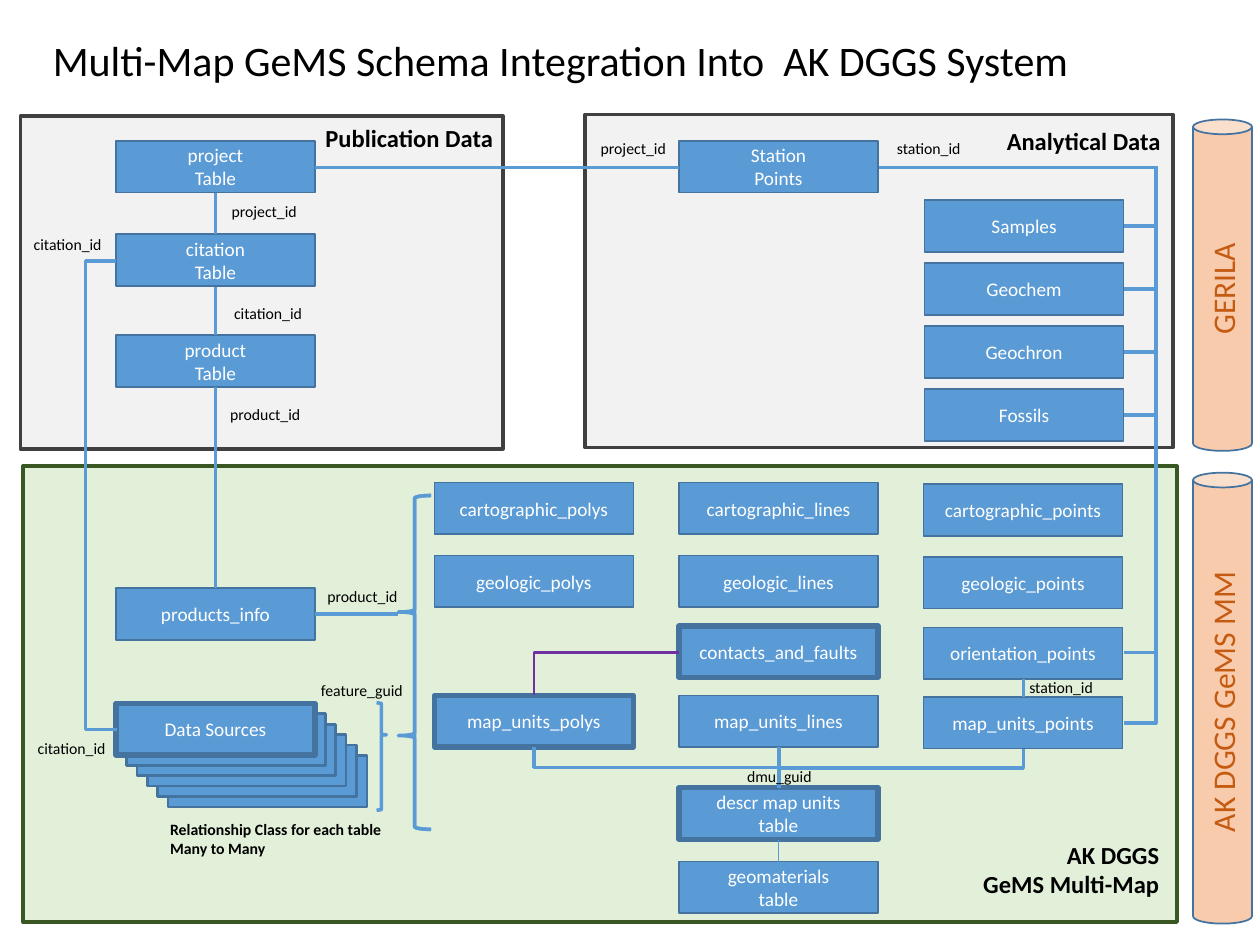
from lxml.etree import SubElement
from pptx import Presentation
from pptx.dml.color import RGBColor
from pptx.enum.shapes import MSO_CONNECTOR as Wire, MSO_SHAPE as Shape
from pptx.enum.text import MSO_ANCHOR as Anchor, MSO_AUTO_SIZE as Fit, PP_ALIGN as Align
from pptx.oxml.ns import qn
from pptx.util import Cm, Pt

hue = RGBColor.from_string
BLUE, EDGE, BLACK = "5B9BD5", "43739E", "000000"
WIDE, HIGH = 4.01, 1.04  # size of a table box


def write(frame, text, size, color, align=Align.LEFT, bold=False, anchor=Anchor.TOP):
    frame.text = text
    frame.word_wrap = True
    frame.vertical_anchor = anchor
    for para in frame.paragraphs:
        para.alignment = align
        for run in para.runs:
            font = run.font
            font.name, font.size, font.bold = "Calibri", Pt(size), bold
            font.color.rgb = hue(color)


def box(x, y, w=WIDE, h=HIGH, fill=BLUE, edge=EDGE, width=1, kind=Shape.RECTANGLE,
        text="", size=11, color="FFFFFF"):
    item = shapes.add_shape(kind, Cm(x), Cm(y), Cm(w), Cm(h))
    item.shadow.inherit = False
    if fill:
        item.fill.solid()
        item.fill.fore_color.rgb = hue(fill)
    else:
        item.fill.background()
    item.line.color.rgb = hue(edge)
    item.line.width = Pt(width)
    if text:
        write(item.text_frame, text, size, color, Align.CENTER, anchor=Anchor.MIDDLE)
    return item


deck = Presentation()
deck.slide_width, deck.slide_height = Cm(25.4), Cm(19.05)
slide = deck.slides.add_slide(deck.slide_layouts[5])
shapes = slide.shapes

# Title
title = shapes.title
title.left, title.top, title.width, title.height = Cm(0.81), Cm(0.56), Cm(23.44), Cm(1.27)
write(title.text_frame, "Multi-Map GeMS Schema Integration Into  AK DGGS System", 24, BLACK)
title.text_frame.auto_size = Fit.NONE

# Panels
box(0.46, 9.4, 23.27, 9.19, "E2F0D9", "385723", 2)
box(0.41, 2.34, 9.73, 6.71, "F2F2F2", "404040", 2)
box(11.79, 2.31, 11.86, 6.71, "F2F2F2", "404040", 2)

# System cylinders
for y, h, text in [(2.41, 6.68, "GERILA"), (9.53, 9.09, "AK DGGS GeMS MM")]:
    can = box(24.05, y, 1.19, h, "F8CBAD", kind=Shape.CAN, text=text, size=18, color="C55A11")
    can.text_frame._txBody.bodyPr.set("vert", "vert270")

# Publication and description tables
for x, y, text, width in [
    (2.34, 2.84, "project\nTable", 1),
    (2.34, 4.72, "citation\nTable", 1),
    (2.34, 6.76, "product\nTable", 1),
    (2.34, 11.86, "products_info", 1),
    (13.69, 2.84, "Station\nPoints", 1),
    (13.69, 15.88, "descr map units\ntable", 3),
    (13.69, 17.37, "geomaterials\ntable", 1),
]:
    box(x, y, width=width, text=text)

# Analytical tables
for i, text in enumerate(["Samples", "Geochem", "Geochron", "Fossils"]):
    box(18.64, 4.04 + 1.27 * i, text=text)

# Map feature tables, column by column
rows = [9.73, 11.2, 12.62, 14.02]
grid = [
    (8.76, 0, ["cartographic_polys", "geologic_polys", "", "map_units_polys"]),
    (13.69, 0, ["cartographic_lines", "geologic_lines", "contacts_and_faults", "map_units_lines"]),
    (18.62, 0.03, ["cartographic_points", "geologic_points", "orientation_points",
                   "map_units_points"]),
]
for x, drop, names in grid:
    for y, name in zip(rows, names):
        if name:
            heavy = name in ("contacts_and_faults", "map_units_polys")
            box(x, y + drop, width=3 if heavy else 1, text=name)

# Stack of data sources
for i in range(5, -1, -1):
    box(2.34 + 0.21 * i, 14.18 + 0.21 * i, width=1.5 if i else 3,
        text="" if i else "Data Sources")

# Braces
for x, y, w, h, tip, turn in [
    (8.03, 9.99, 0.66, 6.73, 0.349, 0),
    (8.03, 9.99, 0.66, 6.73, 0.719, 0),
    (7.59, 14.17, 0.2, 2.16, 0.703, 180),
]:
    brace = box(x, y, w, h, None, BLUE, 2, Shape.LEFT_BRACE)
    brace.adjustments[0], brace.adjustments[1] = 0.083, tip
    brace.rotation = turn

# Links: start, end, route (x of the bend, "down", "corner" or None), colour, width
links = [
    (4.34, 4.72, 4.34, 3.9, None, BLUE, 2),
    (4.34, 6.76, 4.34, 5.78, None, BLUE, 2),
    (4.34, 11.86, 4.34, 7.8, None, BLUE, 2),
    (6.35, 3.38, 13.69, 3.38, None, BLUE, 2),
    (6.35, 12.38, 8.03, 12.38, None, BLUE, 2),
    (20.63, 14.05, 20.63, 13.69, None, BLUE, 2),
    (15.7, 15.88, 15.7, 15.06, None, BLUE, 2),
    (15.7, 16.94, 15.7, 17.37, None, BLUE, 0.5),
    (15.7, 15.88, 10.77, 15.06, "down", BLUE, 2),
    (15.7, 15.88, 20.63, 15.09, "down", BLUE, 2),
    (13.69, 13.15, 10.77, 14.02, "corner", "7030A0", 1.5),
    (2.36, 14.71, 2.34, 5.26, 1.73, BLUE, 2),
]
for y in [14.58, 13.16] + [4.56 + 1.27 * i for i in range(4)]:
    links.append((22.66, y, 17.72, 3.38, 23.3, BLUE, 2))

for x1, y1, x2, y2, route, color, width in links:
    ends = [x1, y1, x2, y2]
    if route == "down":  # lay the elbow on its side, then turn it about its middle
        mx, my = (x1 + x2) / 2, (y1 + y2) / 2
        ends = [mx - y1 + my, my + x1 - mx, mx - y2 + my, my + x2 - mx]
    link = shapes.add_connector(Wire.ELBOW if route else Wire.STRAIGHT, *map(Cm, ends))
    link.line.color.rgb = hue(color)
    link.line.width = Pt(width)
    props = link._element.spPr
    SubElement(props, qn("a:effectLst"))
    shape = props.find(qn("a:prstGeom"))
    if route == "down":
        props.find(qn("a:xfrm")).set("rot", str(270 * 60000))
    elif route == "corner":
        shape.set("prst", "bentConnector2")
    elif route:
        bend = round((route - x1) / (x2 - x1) * 100000)
        SubElement(shape.find(qn("a:avLst")), qn("a:gd"), name="adj1", fmla=f"val {bend}")

# Key labels, panel names and note
left, right = Align.LEFT, Align.RIGHT
labels = [(x, y, w, 0.64, text, 9, left, False) for x, y, w, text in [
    (17.83, 2.67, 1.85, "station_id"),
    (14.81, 15.34, 1.96, "dmu_guid"),
    (6.35, 11.71, 1.93, "product_id"),
    (4.42, 3.94, 1.85, "project_id"),
    (4.47, 5.99, 2.16, "citation_id"),
    (4.39, 8.03, 1.93, "product_id"),
    (6.22, 13.59, 2.24, "feature_guid"),
    (11.86, 2.67, 1.85, "project_id"),
    (0.43, 4.6, 2.16, "citation_id"),
    (0.51, 14.76, 2.16, "citation_id"),
    (20.5, 13.54, 1.93, "station_id"),
]] + [
    (17.96, 2.41, 5.69, 0.86, "Analytical Data", 14, right, True),
    (4.5, 2.36, 5.69, 0.86, "Publication Data", 14, right, True),
    (17.93, 16.81, 5.69, 1.45, "AK DGGS\nGeMS Multi-Map", 14, right, True),
    (3.18, 16.41, 5.36, 1.02, "Relationship Class for each table\nMany to Many", 9, left, True),
]
for x, y, w, h, text, size, align, bold in labels:
    label = shapes.add_textbox(Cm(x), Cm(y), Cm(w), Cm(h))
    write(label.text_frame, text, size, BLACK, align, bold)

deck.save("out.pptx")
